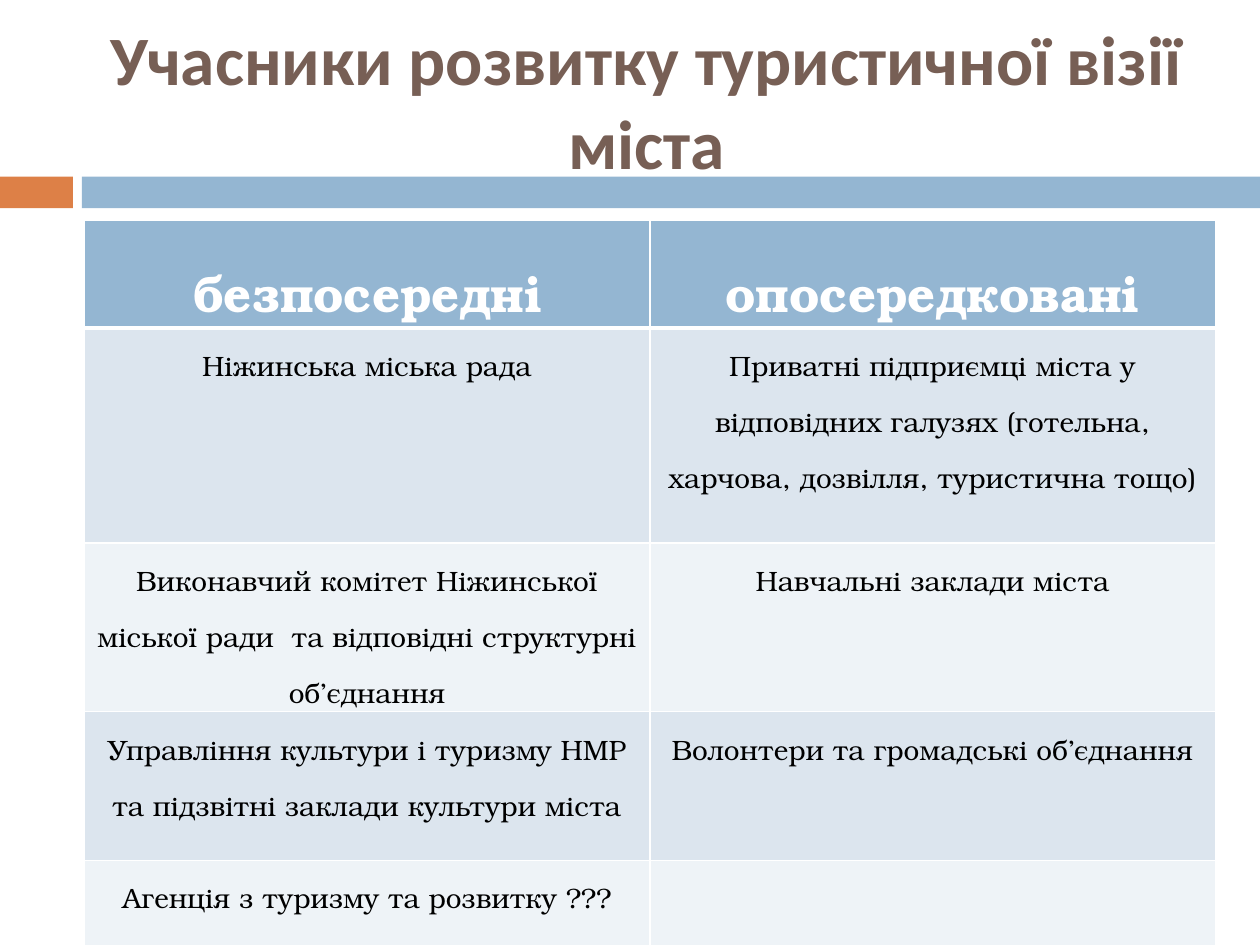
from lxml.etree import SubElement
from pptx import Presentation
from pptx.dml.color import RGBColor
from pptx.enum.shapes import MSO_SHAPE
from pptx.enum.text import MSO_ANCHOR, PP_ALIGN
from pptx.oxml.ns import qn
from pptx.util import Cm, Pt

TITLE = "Учасники розвитку туристичної візії міста"
HEADER = ("безпосередні", "опосередковані")
PARTICIPANTS = [
    ("Ніжинська міська рада",
     "Приватні підприємці міста у відповідних галузях "
     "(готельна, харчова, дозвілля, туристична тощо)"),
    ("Виконавчий комітет Ніжинської міської ради  та відповідні структурні об’єднання",
     "Навчальні заклади міста"),
    ("Управління культури і туризму НМР та підзвітні заклади культури міста",
     "Волонтери та громадські об’єднання"),
    ("Агенція з туризму та розвитку ???", ""),
]
ROW_HEIGHTS = (2.13, 4.34, 3.38, 3, 2.03)
COLUMN_WIDTH = 11.4
BLUE, ORANGE, BROWN, WHITE, BLACK = "94B6D2", "DD8047", "775F55", "FFFFFF", "000000"
BANDS = ("DCE5EE", "EEF3F7")
STRIPES = [(0, 1.47, ORANGE), (1.65, 23.75, BLUE)]  # left, width, colour
TABLE_FONT = "TeX Gyre Bonum"


def paint(fill, colour):
    fill.solid()
    fill.fore_color.rgb = RGBColor.from_string(colour)


def style(paragraph, font, size, colour, bold):
    paragraph.alignment = PP_ALIGN.CENTER
    paragraph.font.name = font
    paragraph.font.size = Pt(size)
    paragraph.font.bold = bold
    paragraph.font.color.rgb = RGBColor.from_string(colour)


def add_borders(cell, bottom):
    """Draw white cell borders; the bottom one has its own width in points."""
    properties = cell._tc.get_or_add_tcPr()
    for index, (side, width) in enumerate(
            (("lnL", 1), ("lnR", 1), ("lnT", 1), ("lnB", bottom))):
        line = SubElement(properties, qn(f"a:{side}"), w=str(Pt(width)))
        colour = SubElement(line, qn("a:solidFill"))
        SubElement(colour, qn("a:srgbClr"), val=WHITE)
        properties.insert(index, line)


def add_stripes(slide):
    for left, width, colour in STRIPES:
        stripe = slide.shapes.add_shape(
            MSO_SHAPE.RECTANGLE, Cm(left), Cm(3.56), Cm(width), Cm(0.64))
        stripe.shadow.inherit = False
        paint(stripe.fill, colour)
        stripe.line.fill.background()


def fill_title(title):
    title.left, title.top, title.width, title.height = Cm(1.7), Cm(0.64), Cm(22.66), Cm(2.74)
    frame = title.text_frame
    frame.text = TITLE
    frame.word_wrap = True
    frame.vertical_anchor = MSO_ANCHOR.MIDDLE
    style(frame.paragraphs[0], "Calibri", 39.6, BROWN, True)


def add_participants(slide):
    rows = [HEADER, *PARTICIPANTS]
    table = slide.shapes.add_table(
        len(rows), len(HEADER), Cm(1.7), Cm(4.45),
        Cm(COLUMN_WIDTH * len(HEADER)), Cm(sum(ROW_HEIGHTS))).table
    for column in table.columns:
        column.width = Cm(COLUMN_WIDTH)
    for r, (texts, height) in enumerate(zip(rows, ROW_HEIGHTS)):
        table.rows[r].height = Cm(height)
        is_header = r == 0
        for c, text in enumerate(texts):
            cell = table.cell(r, c)
            cell.text = text
            cell.margin_left = cell.margin_right = Cm(0.18)
            cell.margin_top = cell.margin_bottom = 0
            paint(cell.fill, BLUE if is_header else BANDS[(r - 1) % 2])
            add_borders(cell, 3 if is_header else 1)
            paragraph = cell.text_frame.paragraphs[0]
            paragraph.line_spacing = 1.5
            style(paragraph, TABLE_FONT, 28 if is_header else 16,
                  WHITE if is_header else BLACK, is_header)


def main():
    presentation = Presentation()
    presentation.slide_width, presentation.slide_height = Cm(25.4), Cm(19.05)
    slide = presentation.slides.add_slide(presentation.slide_layouts[5])
    add_stripes(slide)
    fill_title(slide.shapes.title)
    add_participants(slide)
    presentation.save("out.pptx")


if __name__ == "__main__":
    main()
